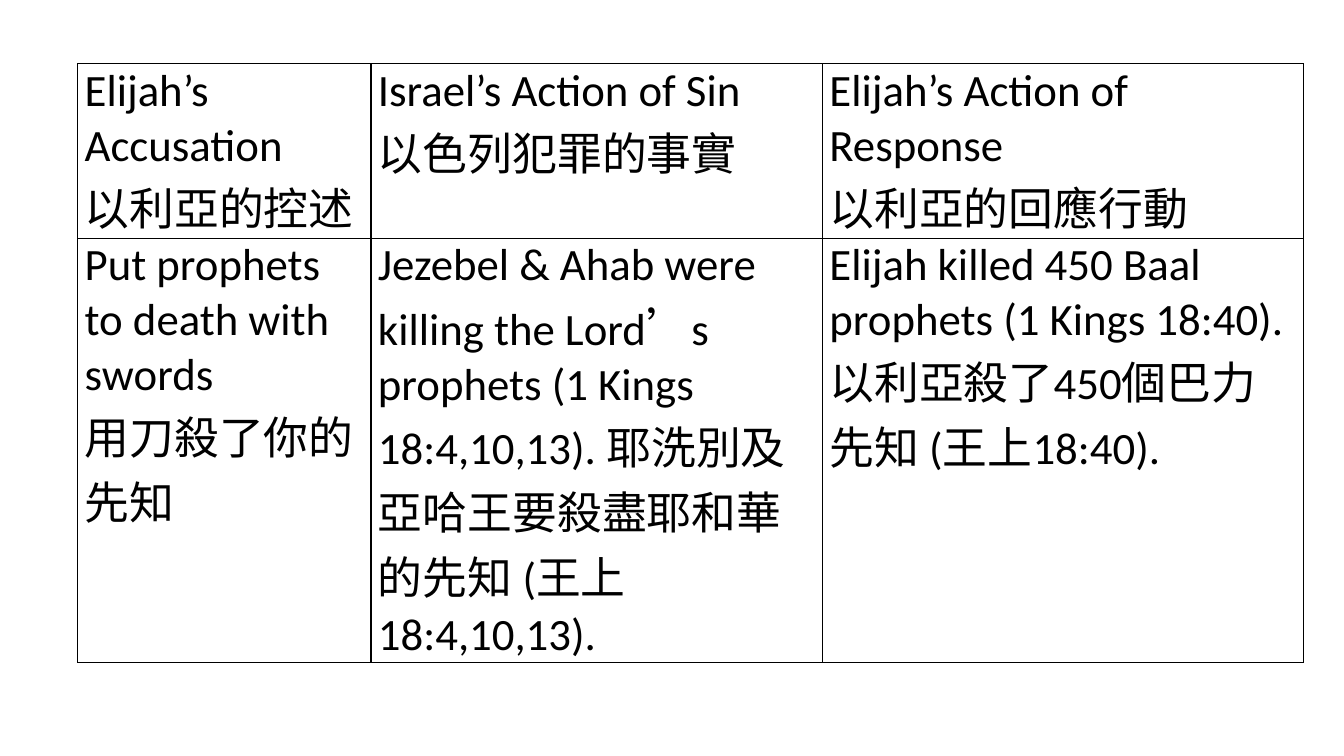
from lxml import etree
from pptx import Presentation
from pptx.dml.color import RGBColor
from pptx.oxml import ns
from pptx.util import Pt

COLORS = {"ink": "000000"}
FONT = "Calibri"
COLUMN_WIDTHS = [209.5, 322.5, 343.5]
ROW_HEIGHTS = [124, 302]
ROWS = [
    [
        "Elijah’s Accusation\n以利亞的控述",
        "Israel’s Action of Sin\n以色列犯罪的事實",
        "Elijah’s Action of Response\n以利亞的回應行動",
    ],
    [
        "Put prophets to death with swords\n用刀殺了你的先知",
        "Jezebel & Ahab were killing the Lord’s prophets (1 Kings 18:4,10,13). "
        "耶洗別及亞哈王要殺盡耶和華的先知 (王上18:4,10,13).",
        "Elijah killed 450 Baal prophets (1 Kings 18:40). "
        "以利亞殺了450個巴力先知 (王上18:40).",
    ],
]


def add_borders(cell):
    properties = cell._tc.get_or_add_tcPr()
    for index, side in enumerate(("lnL", "lnR", "lnT", "lnB")):
        line = etree.Element(ns.qn(f"a:{side}"), w=str(Pt(1)))
        fill = etree.SubElement(line, ns.qn("a:solidFill"))
        etree.SubElement(fill, ns.qn("a:srgbClr"), val=COLORS["ink"])
        properties.insert(index, line)


def fill_cell(cell, content):
    cell.margin_left = cell.margin_right = Pt(5)
    cell.margin_top = cell.margin_bottom = Pt(0)
    cell.fill.background()
    add_borders(cell)
    cell.text_frame.text = content
    for paragraph in cell.text_frame.paragraphs:
        for run in paragraph.runs:
            run.font.name = FONT
            run.font.size = Pt(32)
            run.font.bold = False
            run.font.color.rgb = RGBColor.from_string(COLORS["ink"])


def add_comparison_table(slide, left, top):
    frame = slide.shapes.add_table(
        len(ROWS), len(COLUMN_WIDTHS), Pt(left), Pt(top),
        Pt(sum(COLUMN_WIDTHS)), Pt(sum(ROW_HEIGHTS)),
    )
    table = frame.table
    table.first_row = False
    table.horz_banding = False
    for column, width in zip(table.columns, COLUMN_WIDTHS):
        column.width = Pt(width)
    for row, height, contents in zip(table.rows, ROW_HEIGHTS, ROWS):
        row.height = Pt(height)
        for cell, content in zip(row.cells, contents):
            fill_cell(cell, content)


def main():
    presentation = Presentation()
    presentation.slide_width = Pt(960)
    presentation.slide_height = Pt(540)
    slide = presentation.slides.add_slide(presentation.slide_layouts[6])
    add_comparison_table(slide, 55.5, 45.5)
    presentation.save("out.pptx")


if __name__ == "__main__":
    main()
